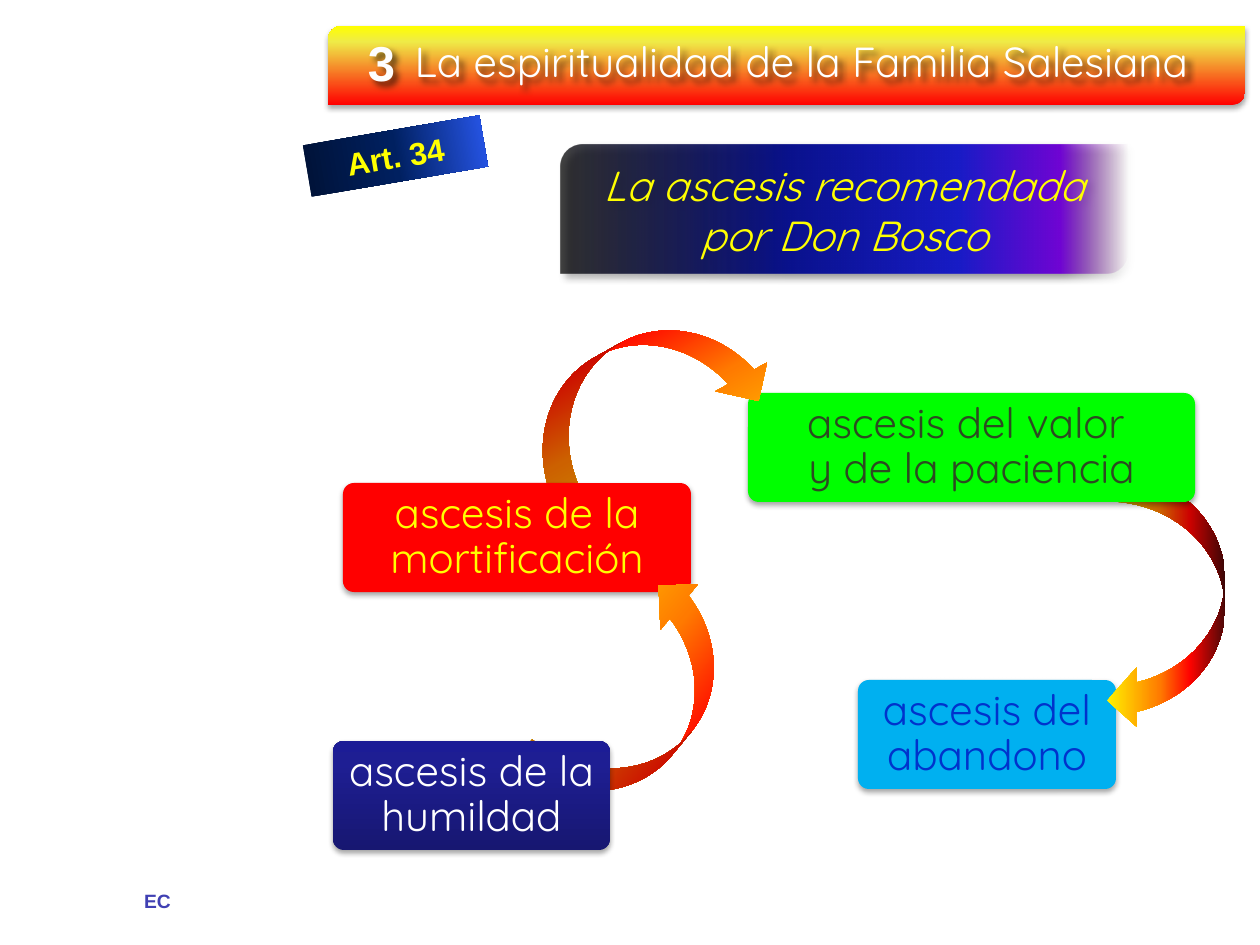
"""Build the slide on the four steps of the recommended ascesis."""
from lxml import etree
from pptx import Presentation
from pptx import util as u
from pptx.dml.color import RGBColor
from pptx.enum import shapes, text
from pptx.oxml.ns import qn

COLORS = {
    "white": "FFFFFF", "yellow": "FFFF00", "red": "FF0000", "green": "00FF00",
    "sky": "00B0F0", "blue": "0033CC", "forest": "2C4B21", "indigo": "4040B3",
    "digit": "FEFEFE", "digit_line": "202086", "black": "000000",
}
GRADIENTS = {
    "arrow": (270, [(0, "FFF200", 100), (45, "FF7A00", 100), (70, "FF0300", 100), (100, "4D0808", 100)]),
    "bar": (90, [(0, "FF0000", 100), (80, "EFEB47", 100), (100, "FFFF00", 100)]),
    "article": (0, [(0, "001236", 100), (50, "002060", 100), (100, "2857EC", 100)]),
    "banner": (0, [(0, "000000", 73), (40, "0A128C", 100), (70, "181CC7", 100),
                   (88, "7005D4", 100), (100, "8C3D91", 0)]),
    "navy": (90, [(0, "171771", 100), (80, "1E1E93", 100), (100, "1C1C96", 100)]),
}
SHADOWS = {"box": (35, 3.1, 1.8, 90), "banner": (40, 4, 3, 45), "letters": (60, 4, 4, 45)}

TITLE = "La espiritualidad de la Familia Salesiana"
TITLE_BOX = (402, 29, 843, 63)
BAR = (328, 26, 917, 79)
NUMBER = ("3", (352, 26, 59, 72))
ARTICLE = ("Art. 34", (306, 130, 179, 52), 350.3)
BANNER = ("La ascesis recomendada por Don Bosco", (561, 145, 566, 129))
FOOTER = ("EC", (131, 883, 53, 37))
STEP_HEIGHT = 109
ARROW_SIZE = (258, 118)
STEPS = [
    (["ascesis del abandono"], (858, 680, 258), "sky", "blue"),
    (["ascesis del valor ", "y de la paciencia"], (748, 393, 447), "green", "forest"),
    (["ascesis de la mortificación"], (343, 483, 348), "red", "yellow"),
    (["ascesis de la humildad"], (333, 741, 277), "navy", "white"),
]
ARROWS = [((1037, 542), 270, True), ((514, 339), 150.8, True), ((512, 641), 309.4, False)]


def px(value):
    return u.Emu(round(value * 914400 / 126))


def rgb(name):
    return RGBColor.from_string(COLORS[name])


def paint(shape, name):
    if name in COLORS:
        shape.fill.solid()
        shape.fill.fore_color.rgb = rgb(name)
        return
    angle, stops = GRADIENTS[name]
    shape.fill.gradient()
    shape.fill.gradient_angle = angle
    stop_list = shape._element.spPr.find(qn("a:gradFill")).find(qn("a:gsLst"))
    for old in list(stop_list):
        stop_list.remove(old)
    for position, color, opacity in stops:
        stop = etree.SubElement(stop_list, qn("a:gs"), pos=str(position * 1000))
        value = etree.SubElement(stop, qn("a:srgbClr"), val=color)
        if opacity < 100:
            etree.SubElement(value, qn("a:alpha"), val=str(opacity * 1000))


def cast_shadow(shape, name):
    opacity, blur, distance, angle = SHADOWS[name]
    shape.shadow.inherit = False
    effects = shape._element.spPr.find(qn("a:effectLst"))
    outer = etree.SubElement(
        effects, qn("a:outerShdw"), blurRad=str(u.Pt(blur)), dist=str(u.Pt(distance)),
        dir=str(angle * 60000), algn="ctr", rotWithShape="0")
    value = etree.SubElement(outer, qn("a:srgbClr"), val=COLORS["black"])
    etree.SubElement(value, qn("a:alpha"), val=str(opacity * 1000))


def add_block(slide, kind, box, fill, shadow=None, rotation=0, corner=None):
    shape = slide.shapes.add_shape(kind, *map(px, box))
    shape.shadow.inherit = False
    shape.line.fill.background()
    shape.rotation = rotation
    paint(shape, fill)
    if shadow:
        cast_shadow(shape, shadow)
    if corner is not None:
        shape.adjustments[0] = corner
    return shape


def write(shape, lines, size, font, color, bold=False, italic=False, spacing=None,
          align=text.PP_ALIGN.CENTER, anchor=text.MSO_ANCHOR.MIDDLE, wrap=True):
    frame = shape.text_frame
    frame.auto_size = text.MSO_AUTO_SIZE.NONE
    frame.word_wrap = wrap
    frame.vertical_anchor = anchor
    for index, line in enumerate(lines):
        paragraph = frame.add_paragraph() if index else frame.paragraphs[0]
        paragraph.alignment = align
        if spacing:
            paragraph.line_spacing = spacing
        run = paragraph.add_run()
        run.text = line
        run.font.size = u.Pt(size)
        run.font.name = font
        run.font.bold = bold
        run.font.italic = italic
        run.font.color.rgb = rgb(color)
    return frame


def add_step(slide, lines, place, fill, color):
    shape = add_block(slide, shapes.MSO_SHAPE.ROUNDED_RECTANGLE, (*place, STEP_HEIGHT),
                      fill, "box", corner=0.1)
    frame = write(shape, lines, 24, "Quicksand", color, spacing=0.9)
    frame.margin_left = frame.margin_right = px(10)
    frame.margin_top = frame.margin_bottom = px(8)


def add_arrow(slide, place, rotation, flipped):
    shape = add_block(slide, shapes.MSO_SHAPE.CURVED_UP_ARROW, (*place, *ARROW_SIZE),
                      "arrow", rotation=rotation)
    if flipped:
        shape._element.spPr.find(qn("a:xfrm")).set("flipH", "1")


def add_heading(slide):
    diagonal = shapes.MSO_SHAPE.ROUND_2_DIAG_RECTANGLE
    add_block(slide, diagonal, BAR, "bar", "box", corner=0.17)

    number = slide.shapes.add_textbox(*map(px, NUMBER[1]))
    write(number, [NUMBER[0]], 28, "Arial", "digit", bold=True, anchor=text.MSO_ANCHOR.TOP)
    cast_shadow(number, "letters")

    title = slide.shapes.title
    title.left, title.top, title.width, title.height = map(px, TITLE_BOX)
    write(title, [TITLE], 24, "Quicksand", "white", align=text.PP_ALIGN.LEFT,
          anchor=text.MSO_ANCHOR.TOP)
    cast_shadow(title, "letters")
    slide.shapes._spTree.append(title._element)

    banner = add_block(slide, diagonal, BANNER[1], "banner", "banner", corner=0.17)
    write(banner, [BANNER[0]], 24, "Quicksand", "yellow", italic=True)


def main():
    presentation = Presentation()
    presentation.slide_width, presentation.slide_height = px(1260), px(945)
    slide = presentation.slides.add_slide(presentation.slide_layouts[5])

    footer = slide.shapes.add_textbox(*map(px, FOOTER[1]))
    write(footer, [FOOTER[0]], 11, "Arial", "indigo", bold=True, wrap=False,
          anchor=text.MSO_ANCHOR.TOP)

    for step, arrow in zip(STEPS[:2], ARROWS[:2]):
        add_step(slide, *step)
        add_arrow(slide, *arrow)
    add_step(slide, *STEPS[2])

    article = add_block(slide, shapes.MSO_SHAPE.RECTANGLE, ARTICLE[1], "article",
                        rotation=ARTICLE[2])
    write(article, [ARTICLE[0]], 18, "Arial", "yellow", bold=True)
    add_heading(slide)

    add_arrow(slide, *ARROWS[2])
    add_step(slide, *STEPS[3])
    presentation.save("out.pptx")


if __name__ == "__main__":
    main()
